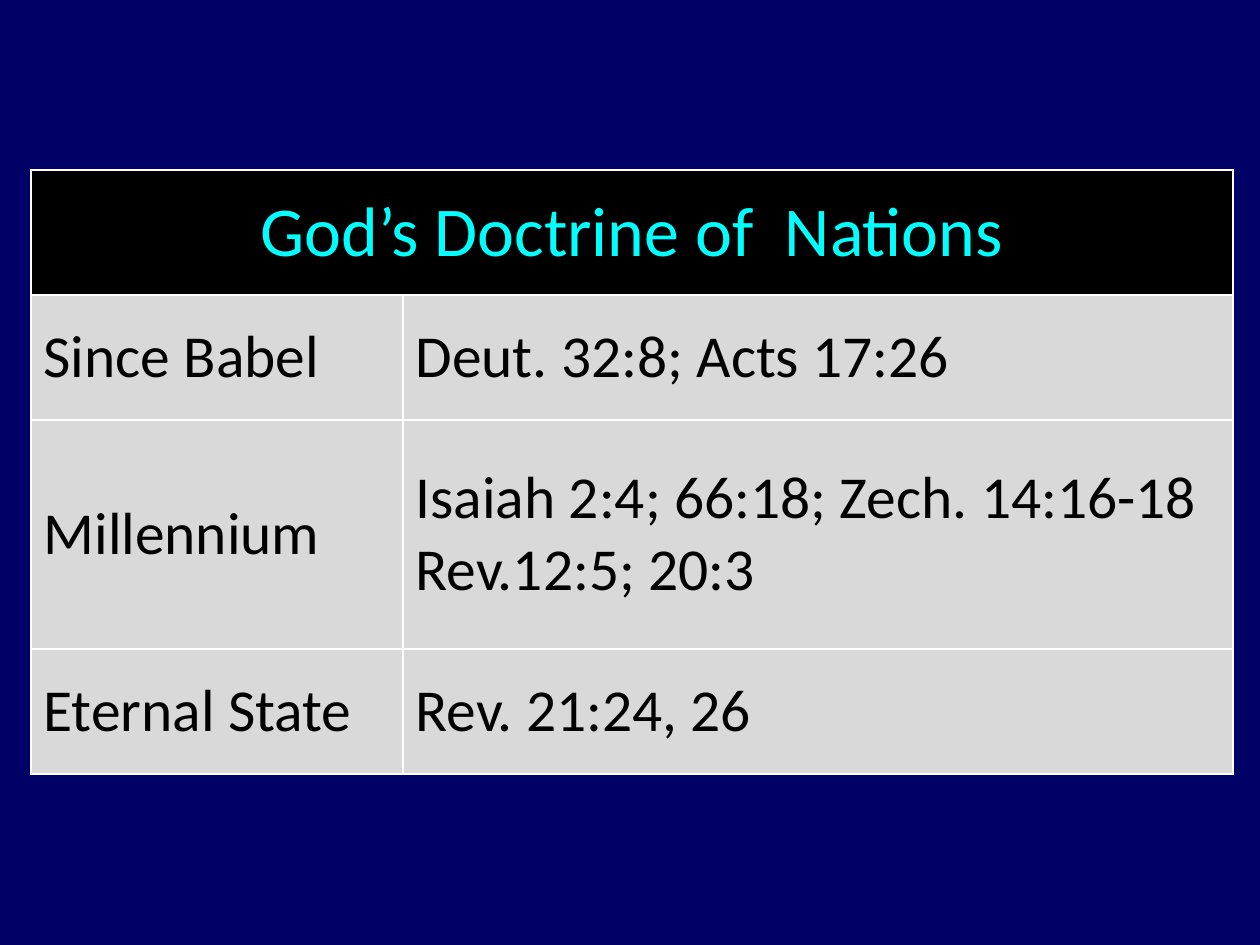
from lxml import etree
from pptx import Presentation, util as u
from pptx.dml.color import RGBColor
from pptx.enum import text
from pptx.oxml.ns import qn

TITLE = "God’s Doctrine of  Nations"
ROWS = [
    ("Since Babel", "Deut. 32:8; Acts 17:26"),
    ("Millennium", "Isaiah 2:4; 66:18; Zech. 14:16-18 Rev.12:5; 20:3"),
    ("Eternal State", "Rev. 21:24, 26"),
]
COLORS = {"background": "000066", "header": "000000", "title": "00FFFF",
          "body": "D9D9D9", "text": "000000", "border": "FFFFFF"}
FONT = "Calibri"
LEFT, TOP = 31, 170
COLUMN_WIDTHS = [372, 830]
ROW_HEIGHTS = [125, 125, 229, 125]


def px(value):
    return u.Emu(round(value * 914400 / 126))


def color(name):
    return RGBColor.from_string(COLORS[name])


def add_borders(cell):
    properties = cell._tc.get_or_add_tcPr()
    for index, side in enumerate(("lnL", "lnR", "lnT", "lnB")):
        line = etree.Element(qn(f"a:{side}"), w=str(u.Pt(1)))
        fill = etree.SubElement(line, qn("a:solidFill"))
        etree.SubElement(fill, qn("a:srgbClr"), val=COLORS["border"])
        properties.insert(index, line)


def write_cell(cell, words, size, ink, alignment):
    cell.vertical_anchor = text.MSO_ANCHOR.MIDDLE
    paragraph = cell.text_frame.paragraphs[0]
    paragraph.alignment = alignment
    run = paragraph.add_run()
    run.text = words
    run.font.name = FONT
    run.font.size = u.Pt(size)
    run.font.bold = False
    run.font.color.rgb = color(ink)


presentation = Presentation()
presentation.slide_width, presentation.slide_height = px(1260), px(945)
slide = presentation.slides.add_slide(presentation.slide_layouts[6])
slide.background.fill.solid()
slide.background.fill.fore_color.rgb = color("background")

# Table grid
table = slide.shapes.add_table(
    len(ROW_HEIGHTS), len(COLUMN_WIDTHS), px(LEFT), px(TOP),
    px(sum(COLUMN_WIDTHS)), px(sum(ROW_HEIGHTS))).table
for column, width in zip(table.columns, COLUMN_WIDTHS):
    column.width = px(width)
for row_index, (row, height) in enumerate(zip(table.rows, ROW_HEIGHTS)):
    row.height = px(height)
    for cell in row.cells:
        cell.fill.solid()
        cell.fill.fore_color.rgb = color("body" if row_index else "header")
        add_borders(cell)

# Header across both columns
header = table.cell(0, 0)
header.merge(table.cell(0, 1))
write_cell(header, TITLE, 40, "title", text.PP_ALIGN.CENTER)

# Periods and their references
for row_index, entries in enumerate(ROWS, start=1):
    for column_index, words in enumerate(entries):
        write_cell(table.cell(row_index, column_index), words, 34, "text",
                   text.PP_ALIGN.LEFT)

presentation.save("out.pptx")
